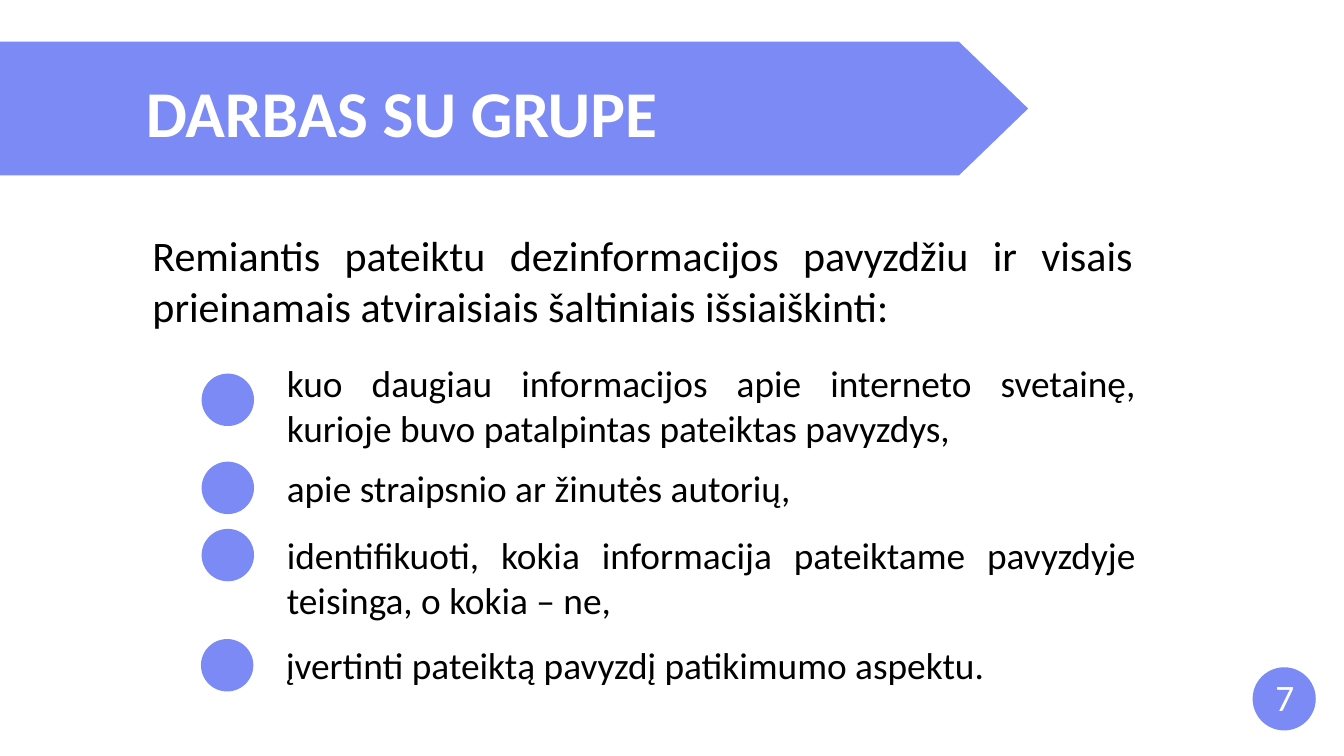
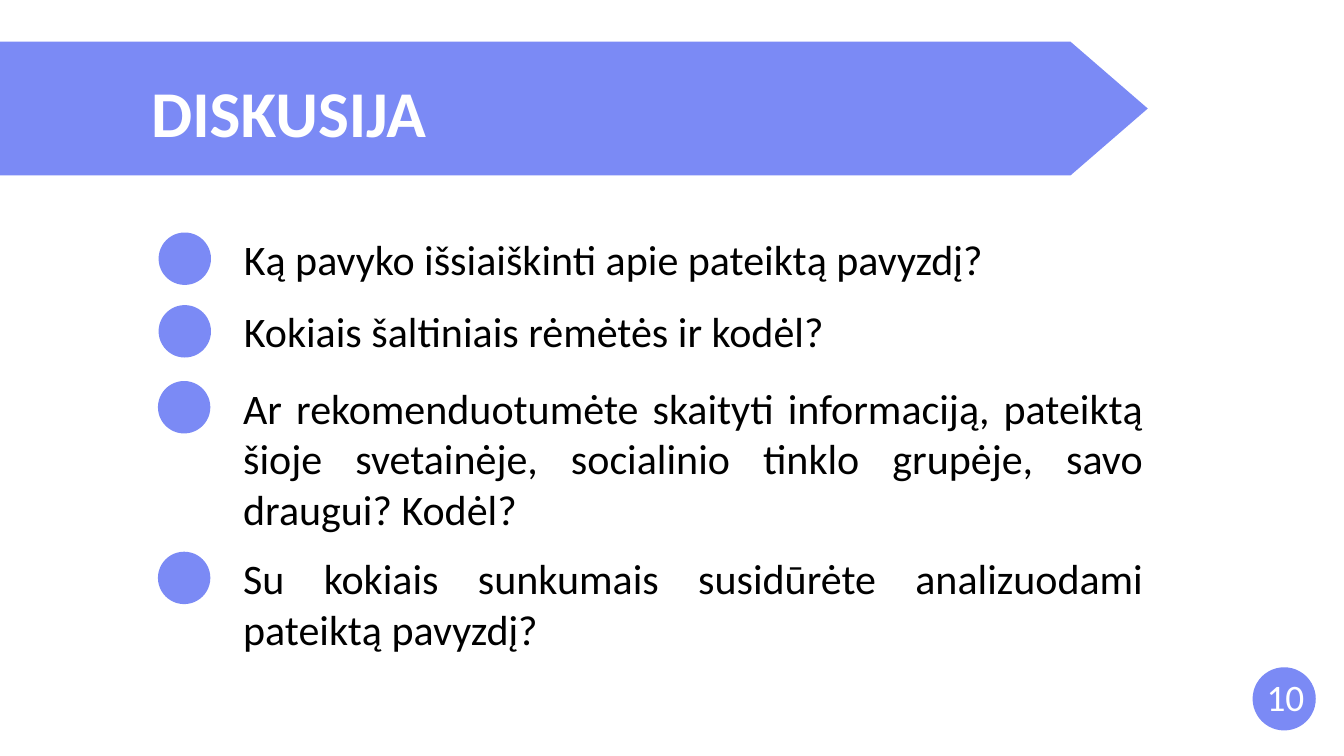
"""Build two slides with an arrow banner, dotted statements and a page badge."""
from dataclasses import dataclass

from pptx import Presentation
from pptx.dml.color import RGBColor
from pptx.enum.shapes import MSO_SHAPE
from pptx.enum.text import MSO_AUTO_SIZE, PP_ALIGN
from pptx.util import Inches, Pt

OVAL = MSO_SHAPE.OVAL
LEFT, JUSTIFY = PP_ALIGN.LEFT, PP_ALIGN.JUSTIFY
GROW = MSO_AUTO_SIZE.SHAPE_TO_FIT_TEXT

BLANK_LAYOUT = 6
LINE_SPACING = 1.22
SIDE_INSET, END_INSET = 0.1, 0.05
BANNER_TOP, BANNER_BOTTOM = 0.62, 2.61
TITLE_TOP, TITLE_WIDTH = 1.06, 14
DOT_SIZE = 0.78
DOT_TO_TEXT = 1.17
BADGE_LEFT, BADGE_TOP, BADGE_SIZE = 18.64, 9.93, 0.94


@dataclass(frozen=True)
class Theme:
    """Colours, font and type sizes shared by the slides."""
    accent: RGBColor = RGBColor(0x7B, 0x8A, 0xF5)
    light: RGBColor = RGBColor(0xFF, 0xFF, 0xFF)
    dark: RGBColor = RGBColor(0, 0, 0)
    font: str = "Calibri"
    title: int = 70
    large: int = 45
    medium: int = 40


THEME = Theme()


@dataclass(frozen=True)
class Banner:
    """Title with the left edge of its text and the ends of the arrow."""
    title: str
    text_left: float
    shoulder: float
    tip: float


@dataclass(frozen=True)
class Statement:
    """Dotted text; dot_drop is how far the dot sits below the text box top."""
    text: str
    left: float
    top: float
    lines: int = 1
    dot_drop: float = 0


@dataclass(frozen=True)
class Page:
    """Everything that differs from slide to slide."""
    banner: Banner
    statements: tuple[Statement, ...]
    text_size: int
    text_width: float
    number: str
    number_left: float
    number_width: float
    intro: str = ""


PAGES = (
    Page(
        Banner("DARBAS SU GRUPE", 2.17, 14.27, 15.3),
        (
            Statement("kuo daugiau informacijos apie interneto svetainę, kurioje buvo "
                      "patalpintas pateiktas pavyzdys,", 3, 5.31, 2, 0.25),
            Statement("apie straipsnio ar žinutės autorių,", 3, 6.87),
            Statement("identifikuoti, kokia informacija pateiktame pavyzdyje teisinga, "
                      "o kokia – ne,", 3, 7.87, 2),
            Statement("įvertinti pateiktą pavyzdį patikimumo aspektu.", 2.99, 9.51),
        ),
        THEME.medium, 12.83, "7", 18.88, 0.67,
        "Remiantis pateiktu dezinformacijos pavyzdžiu ir visais prieinamais "
        "atviraisiais šaltiniais išsiaiškinti:",
    ),
    Page(
        Banner("DISKUSIJA", 2.25, 15.93, 17.08),
        (
            Statement("Ką pavyko išsiaiškinti apie pateiktą pavyzdį?", 2.36, 3.43, 1, 0.03),
            Statement("Kokiais šaltiniais rėmėtės ir kodėl?", 2.36, 4.5, 1, 0.04),
            Statement("Ar rekomenduotumėte skaityti informaciją, pateiktą šioje svetainėje, "
                      "socialinio tinklo grupėje, savo draugui? Kodėl?", 2.35, 5.64, 3, 0.03),
            Statement("Su kokiais sunkumais susidūrėte analizuodami pateiktą pavyzdį?",
                      2.35, 8.18, 2, 0.03),
        ),
        THEME.large, 13.59, "10", 18.75, 0.94,
    ),
)


def add_text(slide, text: str, left: float, top: float, width: float, *, size: int,
             color: RGBColor = THEME.dark, lines: int = 1, bold: bool = False,
             align: PP_ALIGN = JUSTIFY, side_inset: float = SIDE_INSET,
             end_inset: float = END_INSET) -> None:
    """Add a wrapped text box as tall as its lines."""
    height = lines * size * LINE_SPACING / 72 + 2 * end_inset
    box = slide.shapes.add_textbox(Inches(left), Inches(top), Inches(width), Inches(height))
    frame = box.text_frame
    frame.word_wrap = True
    frame.auto_size = GROW
    frame.margin_left = frame.margin_right = Inches(side_inset)
    frame.margin_top = frame.margin_bottom = Inches(end_inset)
    paragraph = frame.paragraphs[0]
    paragraph.alignment = align
    run = paragraph.add_run()
    run.text = text
    run.font.name = THEME.font
    run.font.size = Pt(size)
    run.font.bold = bold
    run.font.color.rgb = color


def paint(shape) -> None:
    """Give a shape the flat accent fill."""
    shape.shadow.inherit = False
    shape.fill.solid()
    shape.fill.fore_color.rgb = THEME.accent
    shape.line.fill.background()


def add_circle(slide, left: float, top: float, diameter: float) -> None:
    """Add an accent circle."""
    paint(slide.shapes.add_shape(OVAL, Inches(left), Inches(top),
                                 Inches(diameter), Inches(diameter)))


def add_banner(slide, banner: Banner) -> None:
    """Add the arrow band from the left edge and the title on it."""
    middle = (BANNER_TOP + BANNER_BOTTOM) / 2
    outline = ((0, BANNER_TOP), (banner.shoulder, BANNER_TOP), (banner.tip, middle),
               (banner.shoulder, BANNER_BOTTOM), (0, BANNER_BOTTOM))
    points = [(Inches(x), Inches(y)) for x, y in outline]
    builder = slide.shapes.build_freeform(*points[0])
    builder.add_line_segments(points[1:], close=True)
    paint(builder.convert_to_shape())
    add_text(slide, banner.title, banner.text_left, TITLE_TOP, TITLE_WIDTH,
             size=THEME.title, color=THEME.light, bold=True, align=LEFT,
             side_inset=0, end_inset=0.01)


def add_statement(slide, statement: Statement, page: Page) -> None:
    """Add a dot and the text beside it."""
    add_circle(slide, statement.left, statement.top + statement.dot_drop, DOT_SIZE)
    add_text(slide, statement.text, statement.left + DOT_TO_TEXT, statement.top,
             page.text_width, size=page.text_size, lines=statement.lines)


def add_page(presentation, page: Page) -> None:
    """Add one complete slide."""
    slide = presentation.slides.add_slide(presentation.slide_layouts[BLANK_LAYOUT])
    add_banner(slide, page.banner)
    if page.intro:
        add_text(slide, page.intro, page.banner.text_left, 3.37, 14.79,
                 size=THEME.large, lines=2)
    for statement in page.statements:
        add_statement(slide, statement, page)
    add_circle(slide, BADGE_LEFT, BADGE_TOP, BADGE_SIZE)
    add_text(slide, page.number, page.number_left, BADGE_TOP + 0.05, page.number_width,
             size=THEME.medium, color=THEME.light)


def main() -> None:
    """Build and save the presentation."""
    presentation = Presentation()
    presentation.slide_width = Inches(20)
    presentation.slide_height = Inches(11.25)
    for page in PAGES:
        add_page(presentation, page)
    presentation.save("out.pptx")


if __name__ == "__main__":
    main()
